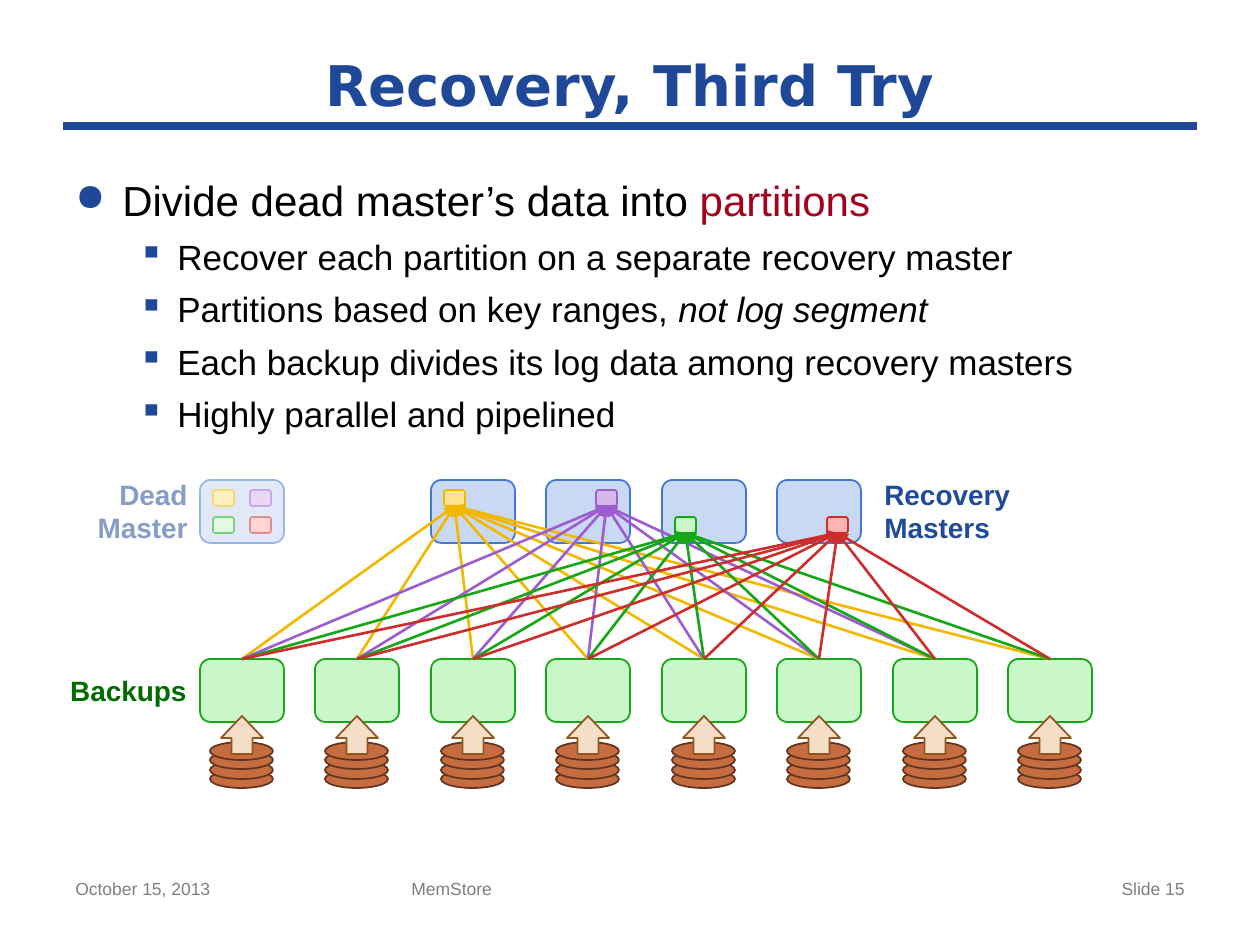
from lxml.etree import SubElement
from pptx import Presentation
from pptx.dml.color import RGBColor
from pptx.enum.shapes import MSO_CONNECTOR as Connector, MSO_SHAPE as Shape
from pptx.enum.text import MSO_ANCHOR as Anchor, MSO_AUTO_SIZE as AutoSize, PP_ALIGN as Align
from pptx.oxml.ns import qn
from pptx.util import Pt

EMU_PER_INCH, PX_PER_INCH = 914400, 126

WHITE = RGBColor(0xFF, 0xFF, 0xFF)
BLACK = RGBColor(0x00, 0x00, 0x00)
GRAY = RGBColor(0x7F, 0x7F, 0x7F)
TITLE_BLUE = RGBColor(0x1F, 0x48, 0x99)
LABEL_BLUE = RGBColor(0x20, 0x4B, 0x98)
LABEL_GREEN = RGBColor(0x00, 0x6C, 0x00)
CRIMSON = RGBColor(0xA5, 0x00, 0x1E)
MASTER = (RGBColor(0xC9, 0xD8, 0xF3), RGBColor(0x41, 0x77, 0xD7))
DISK = (RGBColor(0xC5, 0x6D, 0x41), RGBColor(0x64, 0x35, 0x1E))
READ_ARROW = (RGBColor(0xF4, 0xDE, 0xC8), RGBColor(0x90, 0x56, 0x1C))
YELLOW = (RGBColor(0xFF, 0xE4, 0x8F), RGBColor(0xF2, 0xB8, 0x00))
PURPLE = (RGBColor(0xD5, 0xB8, 0xEA), RGBColor(0x9E, 0x5D, 0xCF))
GREEN = (RGBColor(0xC9, 0xF7, 0xC9), RGBColor(0x15, 0xA7, 0x15))
RED = (RGBColor(0xFF, 0xB3, 0xB3), RGBColor(0xCC, 0x2E, 0x2E))

BACKUP_COUNT = 8
NODE_WIDTH, NODE_HEIGHT = 84, 63
MASTER_TOP, BACKUP_TOP = 480, 659
DISK_TOPS = (770, 761, 751, 742)
FIRST_RECOVERY_COLUMN = 2
PARTITIONS = (
    (YELLOW, 13, 10, 8),
    (PURPLE, 50, 10, 7),
    (GREEN, 13, 37, 8),
    (RED, 50, 37, 8),
)

HEADLINE = (("Divide dead master’s data into ", None), ("partitions", "accent"))
DETAILS = (
    (("Recover each partition on a separate recovery master", None),),
    (("Partitions based on key ranges, ", None), ("not log segment", "italic")),
    (("Each backup divides its log data among recovery masters", None),),
    (("Highly parallel and pipelined", None),),
)


def px(length):
    """Turn a length in px into EMU."""
    return round(length * EMU_PER_INCH / PX_PER_INCH)


def column_left(column):
    """Return the left edge of a node column; two columns span 231 px."""
    return 200 + 231 * column // 2


def style_font(font, size, color, name="Arial", bold=False):
    """Set the look of a font."""
    font.size, font.name, font.bold = Pt(size), name, bold
    font.color.rgb = color


def add_text(slide, box, text, size, color, name="Arial", bold=False,
             align=Align.LEFT, anchor=Anchor.TOP, wrap=True):
    """Add a text box holding one paragraph."""
    frame = slide.shapes.add_textbox(*map(px, box)).text_frame
    frame.word_wrap = wrap
    frame.auto_size = AutoSize.NONE if wrap else AutoSize.SHAPE_TO_FIT_TEXT
    frame.vertical_anchor = anchor
    paragraph = frame.paragraphs[0]
    paragraph.text = text
    paragraph.alignment = align
    style_font(paragraph.font, size, color, name, bold)


def add_bullet(paragraph, pieces, level, symbol, percent, margin, hang, size, gap):
    """Fill a paragraph as a bulleted line."""
    props = paragraph._p.get_or_add_pPr()
    props.set("marL", str(px(margin)))
    props.set("indent", str(-px(hang)))
    bullet_color = SubElement(props, qn("a:buClr"))
    SubElement(bullet_color, qn("a:srgbClr"), val=str(TITLE_BLUE))
    SubElement(props, qn("a:buSzPct"), val=str(percent * 1000))
    SubElement(props, qn("a:buChar"), char=symbol)
    paragraph.level = level
    paragraph.space_before = Pt(gap)
    style_font(paragraph.font, size, BLACK)
    for text, emphasis in pieces:
        run = paragraph.add_run()
        run.text = text
        if emphasis == "accent":
            run.font.color.rgb = CRIMSON
        elif emphasis == "italic":
            run.font.italic = True


def add_body(slide):
    """Add the headline bullet and its details."""
    frame = slide.shapes.add_textbox(*map(px, (63, 168, 1134, 272))).text_frame
    frame.word_wrap = True
    add_bullet(frame.paragraphs[0], HEADLINE, 0, "●", 90, 47, 47, 24, 12)
    for pieces in DETAILS:
        add_bullet(frame.add_paragraph(), pieces, 1, "▪", 100, 102, 39, 20, 6)


def add_part(shapes, kind, box, colors):
    """Add a filled and outlined preset shape."""
    part = shapes.add_shape(kind, *map(px, box))
    part.shadow.inherit = False
    part.fill.solid()
    part.fill.fore_color.rgb, part.line.color.rgb = colors
    part.line.width = Pt(1)
    return part


def add_node(shapes, column, top, colors):
    """Add a server box in a column."""
    box = (column_left(column), top, NODE_WIDTH, NODE_HEIGHT)
    return add_part(shapes, Shape.ROUNDED_RECTANGLE, box, colors)


def add_partition(shapes, column, colors, dx, dy):
    """Add a small partition inside a master."""
    box = (column_left(column) + dx, MASTER_TOP + dy, 21, 16)
    return add_part(shapes, Shape.ROUNDED_RECTANGLE, box, colors)


def add_backup(slide, column):
    """Add a backup with its disk stack and return its box."""
    shapes = slide.shapes.add_group_shape().shapes
    left = column_left(column)
    for top in DISK_TOPS:
        add_part(shapes, Shape.OVAL, (left + 10, top, 63, 18), DISK)
    backup = add_node(shapes, column, BACKUP_TOP, GREEN)
    arrow = add_part(shapes, Shape.UP_ARROW, (left + 21, 716, 42, 38), READ_ARROW)
    arrow.adjustments[1] = 0.58
    return backup


def add_line(slide, color, width, ends=(0, 0, 0, 0)):
    """Add a straight line without shadow."""
    line = slide.shapes.add_connector(Connector.STRAIGHT, *map(px, ends))
    line.line.color.rgb = color
    line.line.width = Pt(width)
    SubElement(line._element.spPr, qn("a:effectLst"))
    return line


def add_flow(slide, backup, partition, color):
    """Add an arrow from a backup up to a partition."""
    flow = add_line(slide, color, 1.5)
    flow.begin_connect(backup, 0)
    flow.end_connect(partition, 2)
    SubElement(flow.line._get_or_add_ln(), qn("a:tailEnd"), type="triangle")


def add_veil(slide, box):
    """Add a translucent white cover that fades the dead master."""
    veil = slide.shapes.add_shape(Shape.RECTANGLE, *map(px, box))
    veil.shadow.inherit = False
    veil.fill.solid()
    veil.fill.fore_color.rgb = WHITE
    veil.line.fill.background()
    color = veil._element.spPr.find(qn("a:solidFill")).find(qn("a:srgbClr"))
    SubElement(color, qn("a:alpha"), val="46000")


def add_diagram(slide):
    """Add backups, masters and the flows between them."""
    backups = [add_backup(slide, column) for column in range(BACKUP_COUNT)]
    add_node(slide.shapes, 0, MASTER_TOP, MASTER)
    targets = []
    for column, (colors, dx, dy, sources) in enumerate(PARTITIONS, FIRST_RECOVERY_COLUMN):
        add_partition(slide.shapes, 0, colors, dx, dy)
        add_node(slide.shapes, column, MASTER_TOP, MASTER)
        partition = add_partition(slide.shapes, column, colors, dx, dy)
        targets.append((partition, colors[1], sources))
    for partition, color, sources in targets:
        for backup in backups[:sources]:
            add_flow(slide, backup, partition, color)
    for box, text, color, align in (
        ((872, 471, 152, 81), "Recovery\nMasters", LABEL_BLUE, Align.LEFT),
        ((57, 667, 142, 47), "Backups", LABEL_GREEN, Align.RIGHT),
        ((83, 471, 117, 81), "Dead\nMaster", LABEL_BLUE, Align.RIGHT),
    ):
        add_text(slide, box, text, 16, color, bold=True, align=align, wrap=False)
    add_veil(slide, (83, 459, 222, 105))


def main():
    """Build the slide and save it."""
    deck = Presentation()
    deck.slide_width, deck.slide_height = px(1260), px(945)
    slide = deck.slides.add_slide(deck.slide_layouts[6])
    add_line(slide, TITLE_BLUE, 4.5, (63, 126, 1197, 126))
    add_text(slide, (63, 42, 1134, 84), "Recovery, Third Try", 32, TITLE_BLUE,
             "DejaVu Sans", True, Align.CENTER, Anchor.MIDDLE)
    add_body(slide)
    for left, width, text, align in (
        (63, 294, "October 15, 2013", Align.LEFT),
        (399, 472, "MemStore", Align.LEFT),
        (903, 294, "Slide 15", Align.RIGHT),
    ):
        add_text(slide, (left, 872, width, 54), text, 10, GRAY, align=align)
    add_diagram(slide)
    deck.save("out.pptx")


if __name__ == "__main__":
    main()
